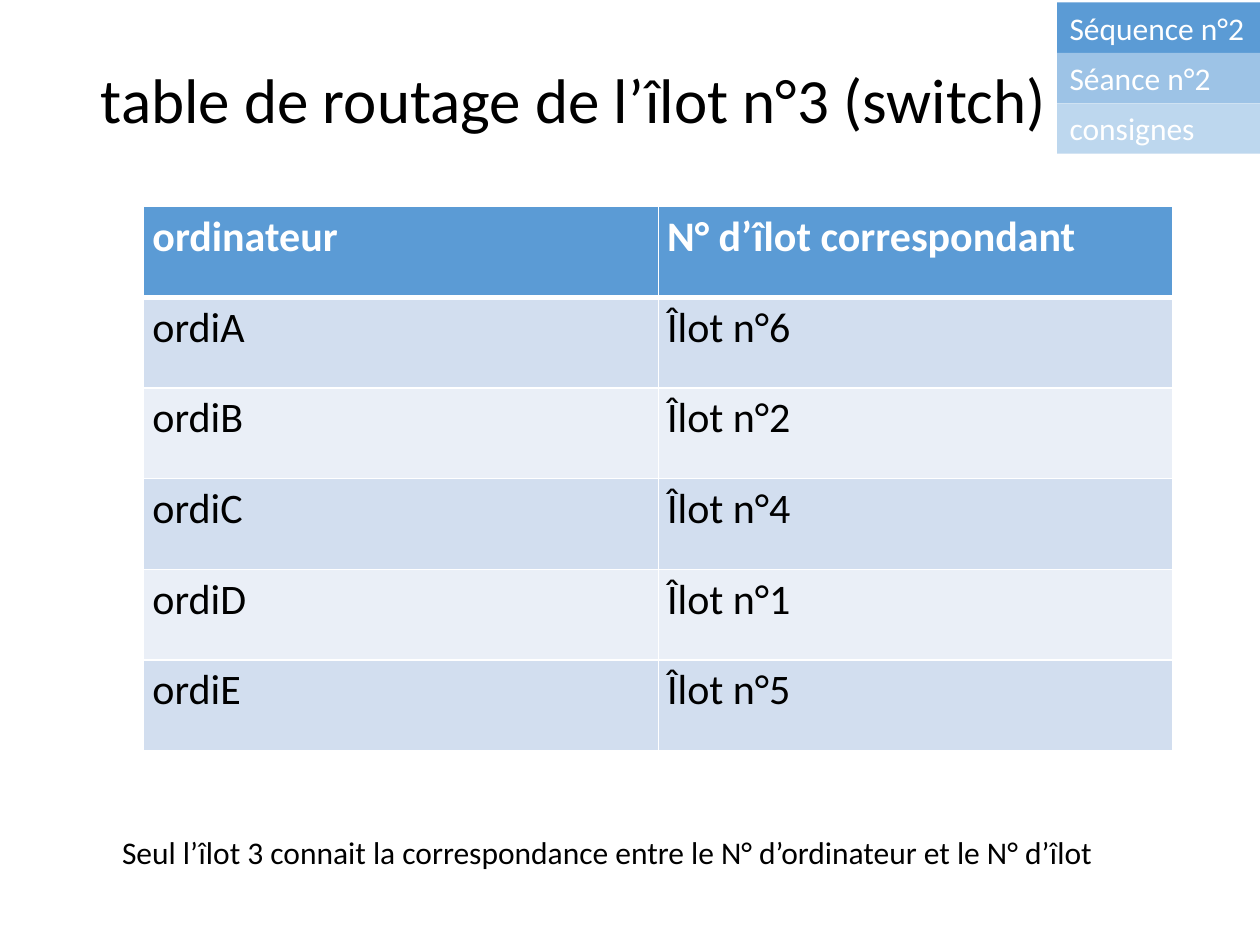
from lxml import etree
from pptx import Presentation
from pptx import util as u
from pptx.dml.color import RGBColor
from pptx.enum import shapes, text
from pptx.oxml.ns import qn

WIDTH, HEIGHT = 10, 7.5
WHITE, BLACK, BLUE = "FFFFFF", "000000", "5B9BD5"
BANDS = ("D2DEEF", "EAEFF7")
TAGS = (("Séquence n°2", BLUE), ("Séance n°2", "9DC3E6"), ("consignes", "BDD7EE"))
ROUTES = (
    ("ordinateur", "N° d’îlot correspondant"),
    ("ordiA", "Îlot n°6"),
    ("ordiB", "Îlot n°2"),
    ("ordiC", "Îlot n°4"),
    ("ordiD", "Îlot n°1"),
    ("ordiE", "Îlot n°5"),
)


def color(value):
    return RGBColor.from_string(value)


def fill(item, value):
    item.fill.solid()
    item.fill.fore_color.rgb = color(value)


def set_borders(cell, bottom):
    """Draw white cell edges; they must precede the fill in the XML."""
    tc_pr = cell._tc.get_or_add_tcPr()
    for side, width in (("L", 1), ("R", 1), ("T", 1), ("B", bottom)):
        ln = etree.SubElement(tc_pr, qn(f"a:ln{side}"), w=str(u.Pt(width)))
        solid = etree.SubElement(ln, qn("a:solidFill"))
        etree.SubElement(solid, qn("a:srgbClr"), val=WHITE)


class SlideBuilder:
    font = "Calibri"

    def __init__(self, prs):
        self.prs = prs
        self.s = prs.slides.add_slide(prs.slide_layouts[5])

    def box(self, x, y, w, h):
        """Turn shares of the slide's size into lengths."""
        sw, sh = self.prs.slide_width, self.prs.slide_height
        return int(x * sw), int(y * sh), int(w * sw), int(h * sh)

    def add_words(self, tf, words, size, value, bold=False):
        p = tf.paragraphs[0]
        p.alignment = text.PP_ALIGN.LEFT
        r = p.add_run()
        r.text = words
        r.font.name, r.font.size, r.font.bold = self.font, u.Pt(size), bold
        r.font.color.rgb = color(value)
        return p

    def title(self, words, *area):
        sp = self.s.shapes.title
        sp.left, sp.top, sp.width, sp.height = self.box(*area)
        tf = sp.text_frame
        tf.word_wrap = True
        tf.auto_size = text.MSO_AUTO_SIZE.NONE
        tf.vertical_anchor = text.MSO_ANCHOR.MIDDLE
        self.add_words(tf, words, 36, BLACK).line_spacing = 0.9

    def tag(self, words, value, *area):
        sp = self.s.shapes.add_shape(shapes.MSO_SHAPE.RECTANGLE, *self.box(*area))
        sp.shadow.inherit = False
        fill(sp, value)
        sp.line.fill.background()
        sp.text_frame.word_wrap = True
        sp.text_frame.vertical_anchor = text.MSO_ANCHOR.TOP
        self.add_words(sp.text_frame, words, 18, WHITE)

    def note(self, words, *area):
        tf = self.s.shapes.add_textbox(*self.box(*area)).text_frame
        tf.word_wrap = True
        self.add_words(tf, words, 18, BLACK)

    def table(self, rows, row_height, *area):
        area = self.box(*area)
        frame = self.s.shapes.add_table(len(rows), len(rows[0]), *area)
        for i, words in enumerate(rows):
            header = i == 0
            frame.table.rows[i].height = int(row_height * self.prs.slide_height)
            for j, word in enumerate(words):
                cell = frame.table.cell(i, j)
                cell.margin_left = cell.margin_right = u.Inches(0.07)
                cell.margin_top = cell.margin_bottom = u.Inches(0.04)
                set_borders(cell, 3 if header else 1)
                fill(cell, BLUE if header else BANDS[(i - 1) % 2])
                self.add_words(cell.text_frame, word, 24,
                               WHITE if header else BLACK, header)
        frame.height = area[3]


def main():
    prs = Presentation()
    prs.slide_width, prs.slide_height = u.Inches(WIDTH), u.Inches(HEIGHT)
    slide = SlideBuilder(prs)
    slide.title("table de routage de l’îlot n°3 (switch)",
                0.07, 0.4 / HEIGHT, 0.86, 0.83 / HEIGHT)
    slide.table(ROUTES, 0.72 / HEIGHT,
                1.14 / WIDTH, 1.64 / HEIGHT, 8.17 / WIDTH, 4.46 / HEIGHT)
    tag_height = 0.4 / HEIGHT
    for i, (words, value) in enumerate(TAGS):
        slide.tag(words, value, 8.39 / WIDTH, 0.02 / HEIGHT + i * tag_height,
                  1.61 / WIDTH, tag_height)
    slide.note("Seul l’îlot 3 connait la correspondance entre le N° d’ordinateur "
               "et le N° d’îlot", 0.87 / WIDTH, 6.56 / HEIGHT, 8.72 / WIDTH, tag_height)
    prs.save("out.pptx")


if __name__ == "__main__":
    main()
